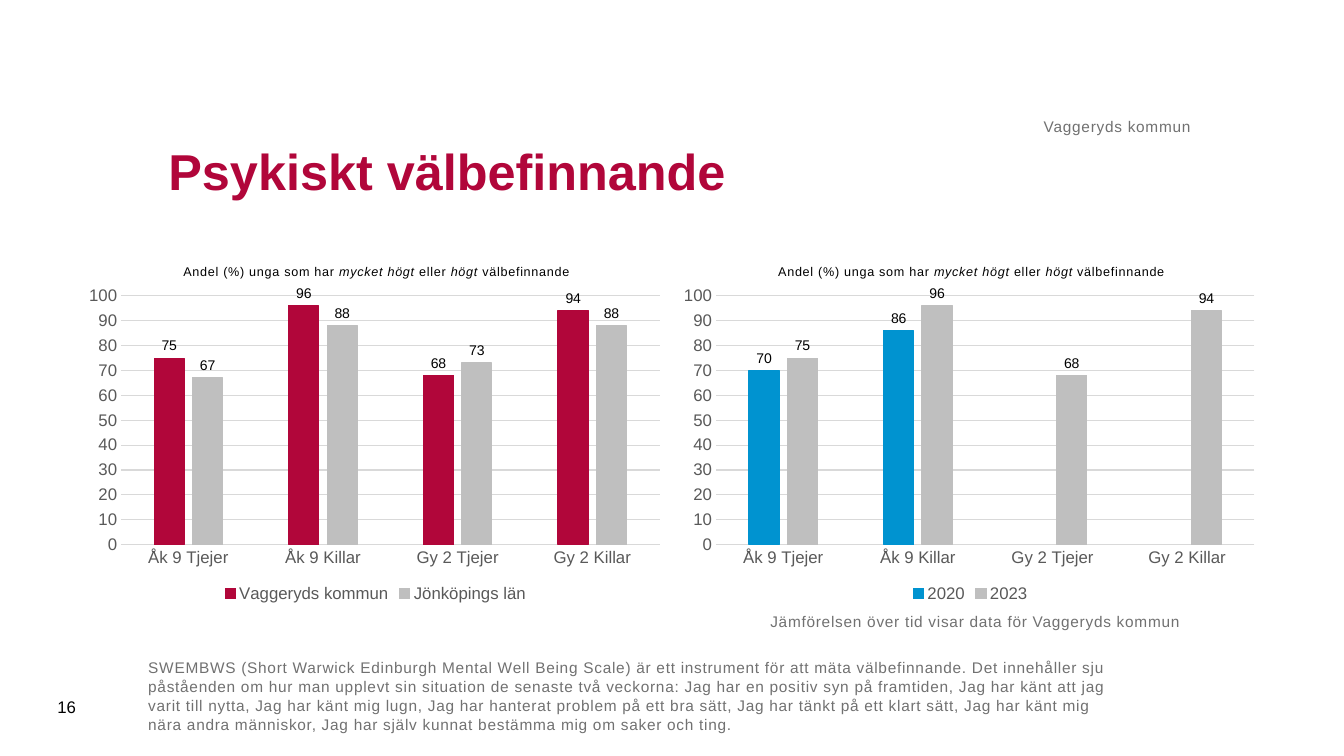
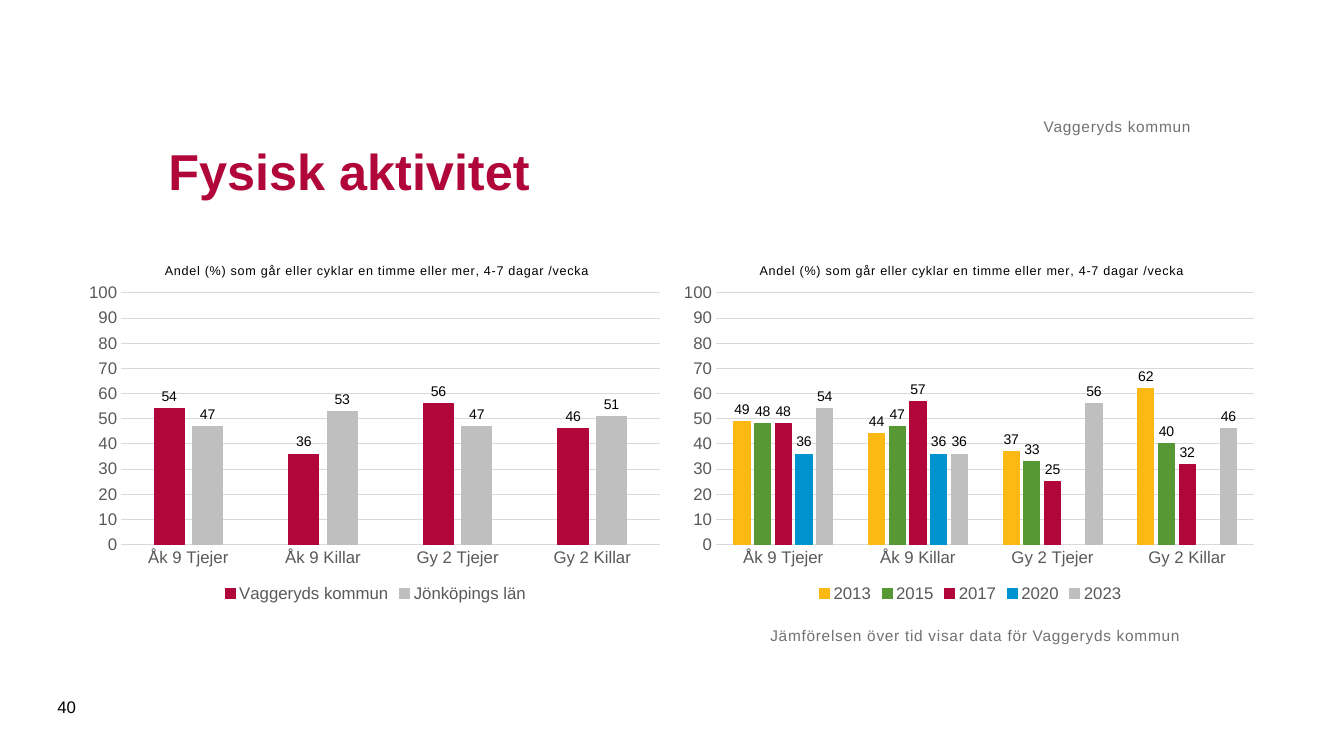
from lxml import etree
from pptx import Presentation
from pptx.chart.data import CategoryChartData
from pptx.dml.color import RGBColor
from pptx.enum.chart import (XL_CHART_TYPE, XL_LABEL_POSITION,
                             XL_LEGEND_POSITION, XL_TICK_MARK)
from pptx.enum.text import MSO_ANCHOR, PP_ALIGN
from pptx.oxml.ns import qn
from pptx.util import Inches, Pt

COLUMNS = XL_CHART_TYPE.COLUMN_CLUSTERED
OUTSIDE_END = XL_LABEL_POSITION.OUTSIDE_END
LEGEND_BOTTOM = XL_LEGEND_POSITION.BOTTOM
NO_TICK = XL_TICK_MARK.NONE
TOP, MIDDLE, BOTTOM = MSO_ANCHOR.TOP, MSO_ANCHOR.MIDDLE, MSO_ANCHOR.BOTTOM
LEFT, RIGHT = PP_ALIGN.LEFT, PP_ALIGN.RIGHT

# Colours
BLACK = RGBColor(0x00, 0x00, 0x00)
RED = RGBColor(0xB1, 0x06, 0x3A)
BLUE = RGBColor(0x00, 0x93, 0xD0)
YELLOW = RGBColor(0xFD, 0xB9, 0x13)
GREEN = RGBColor(0x57, 0x98, 0x35)
LIGHT_GREY = RGBColor(0xBF, 0xBF, 0xBF)
GRID_GREY = RGBColor(0xD9, 0xD9, 0xD9)
AXIS_GREY = RGBColor(0x59, 0x59, 0x59)
TEXT_GREY = RGBColor(0x71, 0x71, 0x71)

# Shared text and chart settings
FONT = "Arial"
TITLE_FORMAT = {"name": FONT, "size": Pt(36), "bold": True}
NOTE_FORMAT = {"name": FONT, "size": Pt(11)}
NUMBER_FORMAT = {"name": FONT, "size": Pt(12)}
AXIS_FORMAT = {"name": FONT, "size": Pt(12)}
LABEL_FORMAT = {"name": FONT, "size": Pt(10)}
CAPTION_FORMAT = {"name": FONT, "size": Pt(9), "bold": False}
LETTER_SPACING = "50"
VALUE_FORMAT = "#,##0;#,##0"
CATEGORIES = ["Åk 9 Tjejer", "Åk 9 Killar", "Gy 2 Tjejer", "Gy 2 Killar"]
CHART_LEFTS = (0.79, 6.69)
CHART_TOP, CHART_WIDTH, CHART_HEIGHT = 2.4, 5.87, 3.62
MUNICIPALITY = "Vaggeryds kommun"
COUNTY = "Jönköpings län"
TREND_NOTE = "Jämförelsen över tid visar data för Vaggeryds kommun"


def set_values(target, values):
    for name, value in values.items():
        setattr(target, name, value)


def set_font(font, values, color):
    set_values(font, values)
    font.color.rgb = color


def set_line(line, color):
    line.color.rgb = color
    line.width = Pt(0.75)


def set_layout(parent, index, **fractions):
    """Place a chart part by fractions of the chart's size."""
    for old_layout in parent.findall(qn("c:layout")):
        parent.remove(old_layout)
    layout = etree.Element(qn("c:layout"))
    manual = etree.SubElement(layout, qn("c:manualLayout"))
    settings = {"xMode": "edge", "yMode": "edge", **fractions}
    if "w" in fractions:
        etree.SubElement(manual, qn("c:layoutTarget")).set("val", "inner")
    for name, value in settings.items():
        etree.SubElement(manual, qn(f"c:{name}")).set("val", str(value))
    parent.insert(index, layout)


class ReportDeck:
    """Holds the presentation, its style and the current slide."""

    def __init__(self):
        self.presentation = Presentation()
        set_values(self.presentation, {"slide_width": Inches(13.33),
                                       "slide_height": Inches(7.5)})
        self.slide = None

    def place(self, shape, left, top, width, height):
        set_values(shape, {"left": Inches(left), "top": Inches(top),
                           "width": Inches(width), "height": Inches(height)})

    def add_slide(self, title, number):
        layout = self.presentation.slide_layouts[5]
        self.slide = self.presentation.slides.add_slide(layout)
        shape = self.slide.shapes.title
        self.place(shape, 1.57, 0.98, 10.24, 1.42)
        frame = shape.text_frame
        frame.text = title
        frame.vertical_anchor = MIDDLE
        frame.paragraphs[0].alignment = LEFT
        set_font(frame.paragraphs[0].runs[0].font, TITLE_FORMAT, RED)
        self.add_note(MUNICIPALITY, (1.57, 0.62, 10.24, 0.73), BOTTOM, RIGHT)
        self.add_text(str(number), (0.47, 6.81, 0.57, 0.4),
                      NUMBER_FORMAT, BLACK, MIDDLE)

    def add_text(self, text, box, values, color, anchor=TOP, alignment=LEFT):
        shape = self.slide.shapes.add_textbox(*map(Inches, box))
        frame = shape.text_frame
        set_values(frame, {"word_wrap": True, "vertical_anchor": anchor})
        paragraph = frame.paragraphs[0]
        paragraph.alignment = alignment
        run = paragraph.add_run()
        run.text = text
        set_font(run.font, values, color)
        return frame

    def add_note(self, text, box, anchor=TOP, alignment=LEFT):
        frame = self.add_text(text, box, NOTE_FORMAT, TEXT_GREY, anchor, alignment)
        set_values(frame, {"margin_left": 0, "margin_right": 0,
                           "margin_top": 0, "margin_bottom": 0})
        paragraph = frame.paragraphs[0]
        paragraph.line_spacing = 1.04
        paragraph.runs[0]._r.get_or_add_rPr().set("spc", LETTER_SPACING)

    def add_chart(self, left, caption, caption_x, plot_y, plot_height, series):
        data = CategoryChartData(number_format=VALUE_FORMAT)
        data.categories = CATEGORIES
        for name, _, values in series:
            data.add_series(name, values)
        box = (left, CHART_TOP, CHART_WIDTH, CHART_HEIGHT)
        chart = self.slide.shapes.add_chart(COLUMNS, *map(Inches, box), data).chart
        set_font(chart.font, LABEL_FORMAT, BLACK)
        self.add_caption(chart, caption, caption_x)
        plot_area = chart._chartSpace.chart.plotArea
        set_layout(plot_area, 0, x=0.07, y=plot_y, w=0.91, h=plot_height)
        self.style_axes(chart)
        self.style_series(chart.plots[0], [color for _, color, _ in series])
        chart.has_legend = True
        set_values(chart.legend, {"position": LEGEND_BOTTOM,
                                  "include_in_layout": False})
        set_font(chart.legend.font, AXIS_FORMAT, AXIS_GREY)

    def add_caption(self, chart, caption, left):
        chart.has_title = True
        title = chart.chart_title
        paragraph = title.text_frame.paragraphs[0]
        for text, italic in caption:
            run = paragraph.add_run()
            run.text = text
            set_font(run.font, {**CAPTION_FORMAT, "italic": italic}, BLACK)
            run._r.get_or_add_rPr().set("spc", LETTER_SPACING)
        set_layout(title._element, 1, x=left, y=0.05)

    def style_axes(self, chart):
        for axis in (chart.category_axis, chart.value_axis):
            set_values(axis, {"major_tick_mark": NO_TICK,
                              "minor_tick_mark": NO_TICK})
            set_font(axis.tick_labels.font, AXIS_FORMAT, AXIS_GREY)
        set_line(chart.category_axis.format.line, GRID_GREY)
        value_axis = chart.value_axis
        set_values(value_axis, {"minimum_scale": 0, "maximum_scale": 100,
                                "major_unit": 10, "has_major_gridlines": True})
        set_values(value_axis.tick_labels, {"number_format": VALUE_FORMAT,
                                            "number_format_is_linked": False})
        value_axis.format.line.fill.background()
        set_line(value_axis.major_gridlines.format.line, GRID_GREY)

    def style_series(self, plot, colors):
        set_values(plot, {"gap_width": 219, "overlap": -27,
                          "vary_by_categories": False})
        for series, color in zip(plot.series, colors):
            series.format.fill.solid()
            series.format.fill.fore_color.rgb = color
            set_line(series.format.line, color)
            labels = series.data_labels
            set_values(labels, {"show_value": True, "position": OUTSIDE_END,
                                "number_format": VALUE_FORMAT,
                                "number_format_is_linked": False})
            set_font(labels.font, LABEL_FORMAT, BLACK)

    def add_comparison(self, caption, caption_x, plot_y, plot_height,
                       area_series, year_series):
        for left, series in zip(CHART_LEFTS, (area_series, year_series)):
            self.add_chart(left, caption, caption_x, plot_y, plot_height, series)


def main():
    deck = ReportDeck()

    # Mental well-being
    deck.add_slide("Psykiskt välbefinnande", 16)
    deck.add_comparison(
        [("Andel (%) unga som har ", False), ("mycket högt", True),
         (" eller ", False), ("högt", True), (" välbefinnande", False)],
        0.17, 0.148, 0.682,
        [(MUNICIPALITY, RED, (75, 96, 68, 94)),
         (COUNTY, LIGHT_GREY, (67, 88, 73, 88))],
        [("2020", BLUE, (70, 86, None, None)),
         ("2023", LIGHT_GREY, (75, 96, 68, 94))])
    deck.add_note(TREND_NOTE, (7.64, 6.07, 5.31, 0.94))
    deck.add_note(
        "SWEMBWS (Short Warwick Edinburgh Mental Well Being Scale) är ett "
        "instrument för att mäta välbefinnande. Det innehåller sju påståenden "
        "om hur man upplevt sin situation de senaste två veckorna: Jag har en "
        "positiv syn på framtiden, Jag har känt att jag varit till nytta, Jag "
        "har känt mig lugn, Jag har hanterat problem på ett bra sätt, Jag har "
        "tänkt på ett klart sätt, Jag har känt mig nära andra människor, Jag "
        "har själv kunnat bestämma mig om saker och ting.",
        (1.47, 6.52, 9.69, 0.94))

    # Physical activity
    deck.add_slide("Fysisk aktivitet", 40)
    deck.add_comparison(
        [("Andel (%) som går eller cyklar en timme eller mer, "
          "4-7 dagar /vecka", False)],
        0.14, 0.14, 0.69,
        [(MUNICIPALITY, RED, (54, 36, 56, 46)),
         (COUNTY, LIGHT_GREY, (47, 53, 47, 51))],
        [("2013", YELLOW, (49, 44, 37, 62)),
         ("2015", GREEN, (48, 47, 33, 40)),
         ("2017", RED, (48, 57, 25, 32)),
         ("2020", BLUE, (36, 36, None, None)),
         ("2023", LIGHT_GREY, (54, 36, 56, 46))])
    deck.add_note(TREND_NOTE, (7.64, 6.2, 5.31, 0.94))

    deck.presentation.save("out.pptx")


if __name__ == "__main__":
    main()
